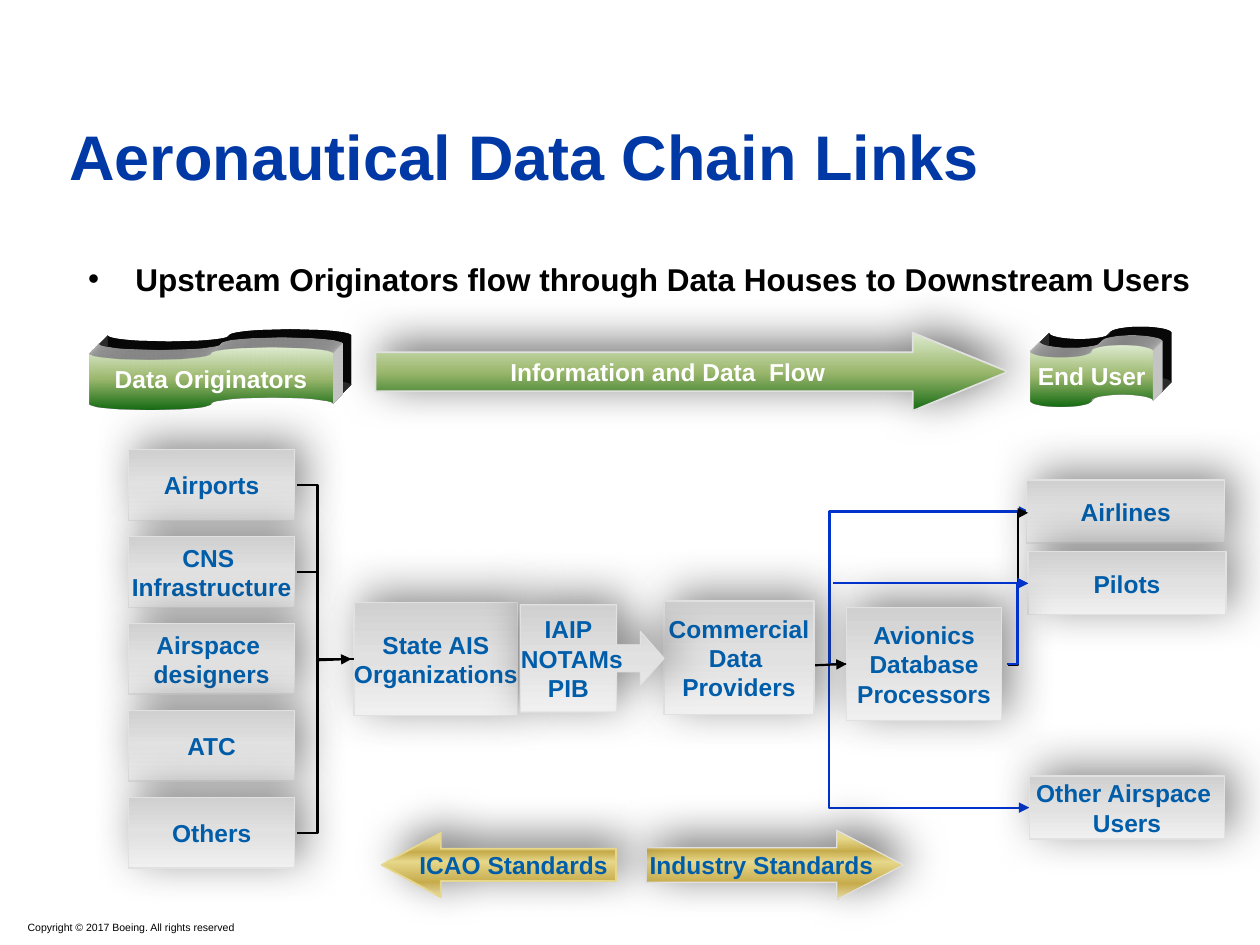
from pptx import Presentation
from pptx.dml.color import RGBColor
from pptx.enum.shapes import MSO_CONNECTOR, MSO_SHAPE
from pptx.enum.text import MSO_ANCHOR, MSO_AUTO_SIZE, PP_ALIGN
from pptx.oxml import parse_xml
from pptx.oxml.ns import nsdecls, qn
from pptx.util import Inches, Pt

RECT, CALL = MSO_SHAPE.RECTANGLE, MSO_SHAPE.RIGHT_ARROW_CALLOUT
RIGHT, LEFT = MSO_SHAPE.RIGHT_ARROW, MSO_SHAPE.LEFT_ARROW
TAPE = MSO_SHAPE.FLOWCHART_PUNCHED_TAPE
ELBOW, LINE = MSO_CONNECTOR.ELBOW, MSO_CONNECTOR.STRAIGHT
TOP, MIDDLE = MSO_ANCHOR.TOP, MSO_ANCHOR.MIDDLE
CENTER, START = PP_ALIGN.CENTER, PP_ALIGN.LEFT
FIXED = MSO_AUTO_SIZE.NONE

BLACK = RGBColor(0, 0, 0)
WHITE = RGBColor(0xFF, 0xFF, 0xFF)
NAVY = RGBColor(0x00, 0x39, 0xA6)
BLUE = RGBColor(0x00, 0x5D, 0xAA)
LINK = RGBColor(0x00, 0x33, 0xCC)
DARK = RGBColor(0x39, 0x39, 0x39)
SILVER = RGBColor(0xE1, 0xE1, 0xE1)
ASH = RGBColor(0xD0, 0xD0, 0xD0)
PALE = RGBColor(0xF0, 0xF0, 0xF0)
MINT = RGBColor(0xDD, 0xEB, 0xCF)
LEAF = RGBColor(0x9C, 0xB8, 0x6E)
GREEN = RGBColor(0x15, 0x6B, 0x13)
CREAM = RGBColor(0xE6, 0xDC, 0xAC)
GOLD = RGBColor(0xE6, 0xD7, 0x8A)
BRONZE = RGBColor(0xC7, 0xAC, 0x4C)

GREY_FILL = [(0, ASH), (50, SILVER), (100, PALE)]
GREEN_FILL = [(0, MINT), (50, LEAF), (100, GREEN)]
GOLD_FILL = [(0, CREAM), (12, GOLD), (30, BRONZE), (45, GOLD), (77, BRONZE), (100, CREAM)]

TITLE = "Aeronautical Data Chain Links"
LEAD = "Upstream Originators flow through Data Houses to Downstream Users"
RIGHTS = "Copyright © 2017 Boeing. All rights reserved"

SOURCES = ["Airports", "CNS \nInfrastructure", "Airspace \ndesigners", "ATC", "Others"]
ROW, STEP = 3.57, 0.69
MID, SPINE = 5.23, 2.52

STAGES = [
    ("Airlines", 8.15, 3.81, 1.57, 0.5),
    ("Pilots", 8.16, 4.38, 1.57, 0.5),
    ("Other Airspace \nUsers", 8.17, 6.16, 1.55, 0.5),
    ("State AIS\nOrganizations", 2.81, 4.78, 1.3, 0.9),
    ("Commercial\nData \nProviders", 5.27, 4.77, 1.19, 0.9),
    ("Avionics\nDatabase\nProcessors", 6.72, 4.82, 1.23, 0.9),
]
BANNERS = [
    (RIGHT, "Information and Data  Flow", (2.98, 2.64, 5.02, 0.62), (0.5, 1.22), GREEN_FILL, WHITE, SILVER, 1),
    (RIGHT, " Industry Standards", (5.13, 6.59, 2.04, 0.55), (0.5, 0.96), GOLD_FILL, BLUE, SILVER, 0.75),
    (LEFT, "ICAO Standards", (3.03, 6.61, 1.86, 0.51), (0.5, 0.92), GOLD_FILL, BLUE, GOLD, 1),
]
TAPES = [("Data Originators", 0.71, 2.76, 1.93, 0.49), ("End User", 8.18, 2.74, 0.97, 0.49)]
BACK = [
    ((6.94, 5.27, 8.17, 4.06), LINK, -0.29),
    ((6.93, 5.27, 8.17, 6.41), LINK, -0.28),
]
FRONT = [
    ((8, 5.28, 8.16, 4.07), BLACK, 0.5),
    ((7.99, 5.27, 8.16, 4.63), LINK, 0.5),
    ((6.61, 4.63, 8.16, 4.63), LINK, None),
    ((2.53, 5.24, 2.79, MID), BLACK, None),
    ((6.47, 5.28, 6.72, 5.27), BLACK, None),
]


def node(xml):
    head, tail = xml.split(" ", 1)
    return parse_xml(f"{head} {nsdecls('a')} {tail}")


def place(shape, *area):
    shape.left, shape.top, shape.width, shape.height = map(Inches, area)


def write(shape, text, size, color, align, bold=True, anchor=TOP, wrap=True, inset=None):
    frame = shape.text_frame
    frame.text = text
    frame.word_wrap, frame.vertical_anchor = wrap, anchor
    frame.auto_size = FIXED
    if inset is not None:
        frame.margin_left = frame.margin_right = Inches(inset)
        frame.margin_top = frame.margin_bottom = Inches(inset)
    for para in frame.paragraphs:
        para.alignment = align
        para.space_before = Pt(0)
        font = para.font
        font.name, font.size, font.bold = "Arial", Pt(size), bold
        font.color.rgb = color


def block(kind, text, area, stops=GREY_FILL, ink=BLUE, edge=SILVER, width=0.75, shade=BLACK, adj=()):
    shape = slide.shapes.add_shape(kind, *map(Inches, area))
    for i, part in enumerate(adj):
        shape.adjustments[i] = part
    shape.fill.gradient()
    shape.fill.gradient_angle = 270
    props = shape._element.spPr
    ramp = props.find(qn("a:gradFill")).find(qn("a:gsLst"))
    for stop in list(ramp):
        ramp.remove(stop)
    for pos, rgb in stops:
        ramp.append(node(f'<a:gs pos="{pos * 1000}"><a:srgbClr val="{rgb}"/></a:gs>'))
    shape.line.color.rgb = edge
    shape.line.width = Pt(width)
    shape.shadow.inherit = False
    props.find(qn("a:effectLst")).append(node(
        f'<a:outerShdw blurRad="{Pt(26)}" dist="{Pt(7)}" dir="18900000" rotWithShape="0">'
        f'<a:srgbClr val="{shade}"><a:alpha val="58000"/></a:srgbClr></a:outerShdw>'))
    write(shape, text, 14, ink, CENTER, anchor=MIDDLE, wrap=False)
    return shape


def link(ends, color, bend=None, arrow=True):
    kind = LINE if bend is None else ELBOW
    line = slide.shapes.add_connector(kind, *map(Inches, ends))
    line.line.color.rgb = color
    line.line.width = Pt(1.25)
    props = line._element.spPr
    if bend is not None:
        guide = props.find(qn("a:prstGeom")).get_or_add_avLst()
        guide.append(node(f'<a:gd name="adj1" fmla="val {round(bend * 100000)}"/>'))
    if arrow:
        props.find(qn("a:ln")).append(node('<a:tailEnd type="triangle"/>'))
    props.append(node("<a:effectLst />"))


deck = Presentation()
deck.slide_width, deck.slide_height = Inches(10), Inches(7.5)
slide = deck.slides.add_slide(deck.slide_layouts[1])

title, body = slide.placeholders
place(title, 0.54, 0.99, 9, 0.84)
write(title, TITLE, 36, NAVY, START, inset=0.01)
title.text_frame.paragraphs[0].line_spacing = 0.9

place(body, 0.5, 2.01, 9.15, 5.15)
body.text_frame.text = LEAD
props = body.text_frame.paragraphs[0]._p.get_or_add_pPr()
props.set("marL", "0")
props.set("indent", "0")
props.append(node("<a:buNone />"))
write(body, LEAD, 18, BLACK, CENTER)

rights = slide.shapes.add_textbox(*map(Inches, (0.21, 7.3, 2.93, 0.12)))
write(rights, RIGHTS, 6, BLACK, START, bold=False, inset=0.01)

for ends, color, bend in BACK:
    link(ends, color, bend)
for i, text in enumerate(SOURCES):
    top = ROW + i * STEP
    block(RECT, text, (1.02, top, 1.32, 0.56), shade=DARK)
for text, *area in STAGES:
    block(RECT, text, area, shade=DARK)
block(CALL, "IAIP\n NOTAMs\nPIB", (4.13, 4.8, 1.14, 0.85), shade=DARK, adj=(0.25, 0.25, 0.22, 0.67))

for i in (0, 1, 4):
    link((2.36, ROW + 0.28 + i * STEP, 2.68, MID), BLACK, 0.5, False)
link((SPINE, 5.92, 2.81, MID), BLACK, 0, False)
for ends, color, bend in FRONT:
    link(ends, color, bend)

for kind, text, area, adj, stops, ink, edge, width in BANNERS:
    block(kind, text, area, stops, ink, edge, width, adj=adj)
for text, *area in TAPES:
    props = block(TAPE, text, area, GREEN_FILL, WHITE)._element.spPr
    props.append(node(
        '<a:scene3d ><a:camera prst="legacyObliqueTopRight"/>'
        '<a:lightRig rig="legacyFlat3" dir="b"/></a:scene3d>'))
    props.append(node(
        f'<a:sp3d extrusionH="{Pt(16)}" prstMaterial="legacyMatte">'
        f'<a:extrusionClr><a:srgbClr val="{SILVER}"/></a:extrusionClr></a:sp3d>'))

deck.save("out.pptx")
